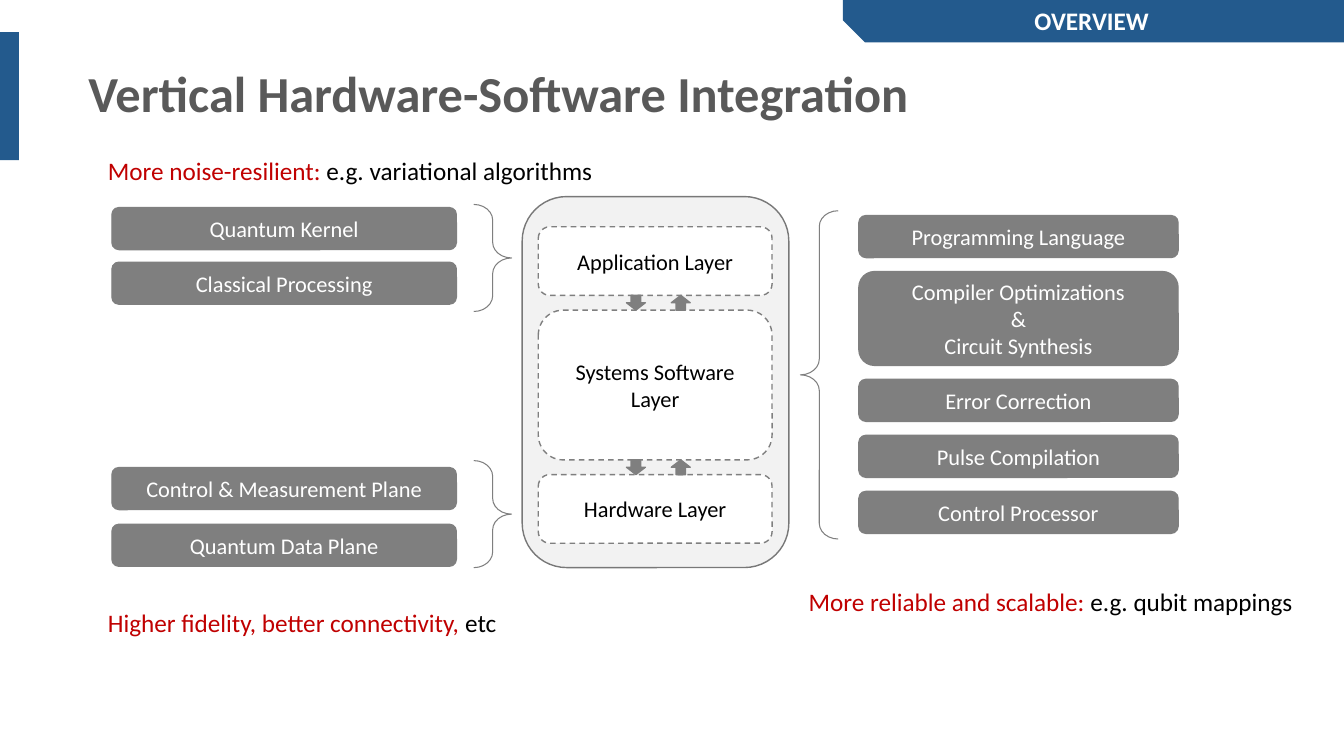
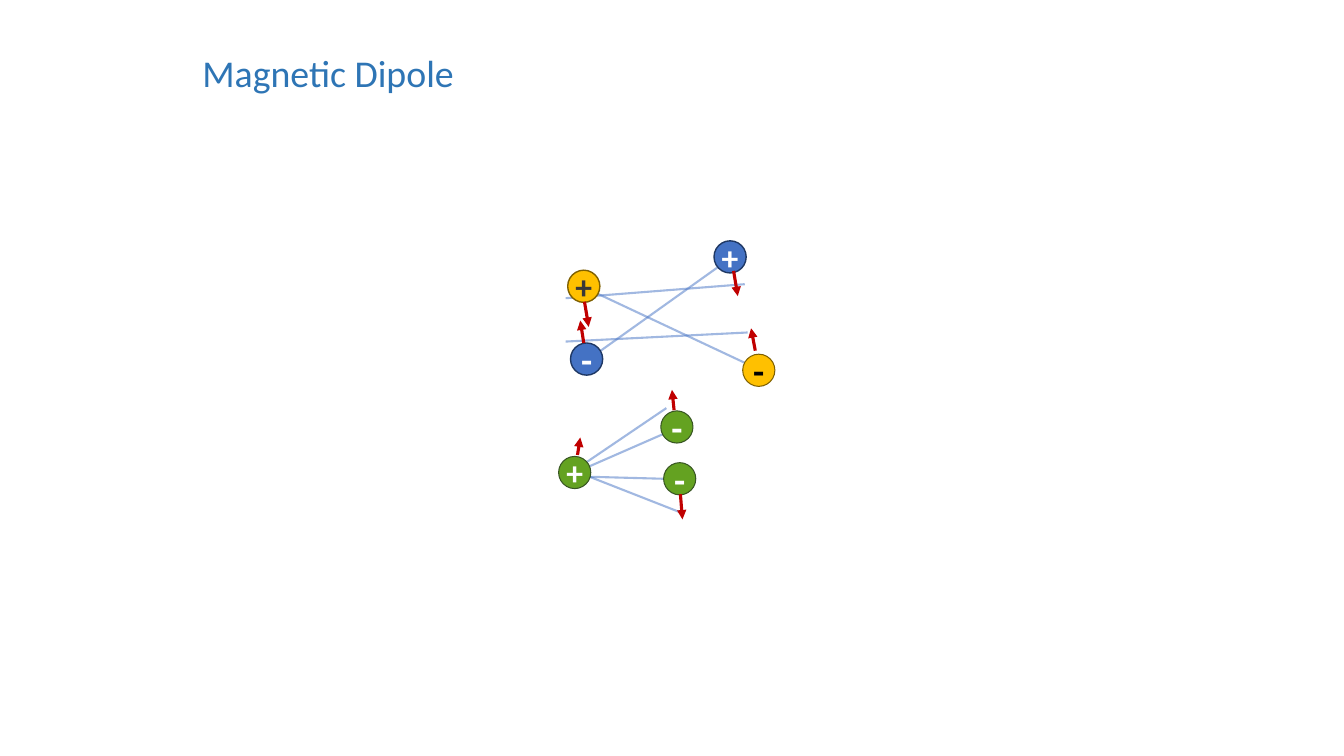
from pptx import Presentation
from pptx.util import Pt
from pptx.dml.color import RGBColor
from pptx.enum import dml, shapes, text
from pptx.oxml import ns
from lxml import etree

INK = {"navy": "235A8D", "white": "FFFFFF", "black": "000000", "pale": "F2F2F2",
       "gray": "7F7F7F", "edge": "787878", "slate": "595959", "red": "C00000",
       "title": "2E75B5", "blue": "4472C4", "deep": "1F3864", "gold": "FFC000",
       "brown": "7F6000", "green": "64A221", "moss": "385623", "coal": "3A3838"}
FONT = "Calibri"
KIND = shapes.MSO_SHAPE
MID = text.PP_ALIGN.CENTER

# Stacks of boxes: left, top, width, gap, dashed, (label, height)
LAYERS = (384.5, 162, 167, 10.5, True, [
    ("Application Layer", 49), ("Systems Software\nLayer", 107), ("Hardware Layer", 49)])
STACKS = [
    LAYERS,
    (613.5, 154, 228, 10, False, [
        ("Programming Language", 30),
        ("Compiler Optimizations\n&\nCircuit Synthesis", 67),
        ("Error Correction", 30), ("Pulse Compilation", 30), ("Control Processor", 30)]),
    (80, 148.3, 246, 9, False, [("Quantum Kernel", 30), ("Classical Processing", 30)]),
    (80, 334, 246, 10.5, False, [("Control & Measurement Plane", 30),
                                 ("Quantum Data Plane", 30)]),
]
# Braces: left, top, height, turn
BRACES = [(338.4, 146, 76.5, 0), (338.4, 329, 76.5, 0), (571.7, 150.5, 234.5, 180)]
# Notes: left, top, width, red part, black part
NOTES = [
    (70, 107.5, 364, "More noise-resilient: ", "e.g. variational algorithms"),
    (70, 430, 296, "Higher fidelity, better connectivity,", " etc"),
    (570.5, 415.5, 364, "More reliable and scalable: ", "e.g. qubit mappings"),
]

# Charges: centre x, centre y, sign, sign colour, fill, edge, edge width
SIZE = 23
CHARGES = [
    (542, 264.5, "-", "black", "gold", "brown", 0.75),
    (521.5, 183.5, "+", "white", "blue", "deep", 1),
    (419, 256.5, "-", "white", "blue", "deep", 1),
    (417, 204.5, "+", "coal", "gold", "brown", 1),
    (410.5, 337.5, "+", "white", "green", "moss", 0.75),
    (483.5, 305, "-", "white", "green", "moss", 0.75),
    (485.5, 342, "-", "white", "green", "moss", 0.75),
]
# Lines and arrows: from x, from y, to x, to y
FIELD = [
    (409.5, 336, 486, 366), (532, 203, 404, 213), (404, 244, 534, 237.5),
    (414, 333.5, 476, 291.5), (419, 340.5, 475, 342), (419, 334, 475, 309.5),
    (422, 207.5, 537, 261.5), (427, 252, 514, 190),
]
MOMENTS = [
    (486, 353, 487.5, 371), (417.5, 215.5, 420.5, 233.5), (524, 193.5, 527, 211.5),
    (417, 245, 414.5, 229), (539.5, 250.5, 536.5, 234.5), (412.5, 325, 414.5, 312.5),
    (481.5, 293, 480, 278.5),
]


def rgb(name):
    return RGBColor.from_string(INK[name])


def style(para, size, ink, bold=False, align=None):
    para.alignment = align
    for run in para.runs:
        font = run.font
        font.name, font.size, font.bold = FONT, Pt(size), bold
        font.color.rgb = rgb(ink)


def form(slide, kind, box, fill=None, edge=None, width=1, turn=0):
    item = slide.shapes.add_shape(kind, *map(Pt, box))
    item.shadow.inherit = False
    item.rotation = turn
    if fill:
        item.fill.solid()
        item.fill.fore_color.rgb = rgb(fill)
    else:
        item.fill.background()
    if edge:
        item.line.color.rgb = rgb(edge)
        item.line.width = Pt(width)
    else:
        item.line.fill.background()
    return item


def fill_text(item, words, size, ink, bold=False):
    frame = item.text_frame
    frame.text = words
    frame.vertical_anchor = text.MSO_ANCHOR.MIDDLE
    for para in frame.paragraphs:
        style(para, size, ink, bold, MID)
    return frame


def label(slide, box, words, size, ink, bold=False, align=None):
    frame = slide.shapes.add_textbox(*map(Pt, box)).text_frame
    frame.word_wrap = True
    para = frame.paragraphs[0]
    para.text = words
    style(para, size, ink, bold, align)
    return para


def stack(slide, left, top, width, gap, dashed, items):
    for words, high in items:
        box = form(slide, KIND.ROUNDED_RECTANGLE, (left, top, width, high),
                   "white" if dashed else "gray", "gray")
        if dashed:
            box.line.dash_style = dml.MSO_LINE.DASH
        fill_text(box, words, 16, "black" if dashed else "white")
        top += high + gap


def line(slide, ends, ink, width, alpha=None, arrow=False):
    link = slide.shapes.add_connector(shapes.MSO_CONNECTOR.STRAIGHT, *map(Pt, ends))
    link.line.color.rgb = rgb(ink)
    link.line.width = Pt(width)
    props = link._element.spPr
    if alpha:
        tone = props.find(".//" + ns.qn("a:srgbClr"))
        etree.SubElement(tone, ns.qn("a:alpha"), val=str(alpha * 1000))
    if arrow:
        etree.SubElement(props.find(ns.qn("a:ln")), ns.qn("a:tailEnd"), type="triangle")
    etree.SubElement(props, ns.qn("a:effectLst"))


def layers(slide):
    # Section tab, side band and title
    tab = form(slide, KIND.SNIP_1_RECTANGLE, (602, -1.4, 358, 31.7), "navy", turn=180)
    tab.adjustments[0] = 0.5
    label(slide, (618.5, 0, 322.5, 29), "OVERVIEW", 18, "white", True, MID)
    form(slide, KIND.RECTANGLE, (0, 23, 13.5, 91.5), "navy")
    label(slide, (56, 40.5, 814, 51), "Vertical Hardware-Software Integration",
          36, "slate", True)

    # Central panel and all stacks
    form(slide, KIND.ROUNDED_RECTANGLE, (373, 140.4, 190.5, 265), "pale", "edge")
    for args in STACKS:
        stack(slide, *args)

    # Arrow pairs in the gaps between layers
    top, gap, items = LAYERS[1], LAYERS[3], LAYERS[5]
    for _, high in items[:-1]:
        top += high
        for left, turn in ((447.5, 0), (479.5, 180)):
            form(slide, KIND.DOWN_ARROW, (left, top, 13.5, gap), "gray", "gray", turn=turn)
        top += gap

    # Braces and notes
    for left, top, high, turn in BRACES:
        brace = form(slide, KIND.RIGHT_BRACE, (left, top, 27, high),
                     edge="gray", width=0.75, turn=turn)
        brace.adjustments[0] = 0.417
    for left, top, width, lead, rest in NOTES:
        para = label(slide, (left, top, width, 29), lead, 18, "red")
        para.add_run().text = rest
        style(para, 18, "black")
        para.runs[0].font.color.rgb = rgb("red")


def dipole(slide):
    label(slide, (137.5, 31.7, 310, 41), "Magnetic Dipole", 27, "title")
    for ends in FIELD:
        line(slide, ends, "blue", 1.5, alpha=50)
    for x, y, sign, ink, fill, edge, width in CHARGES:
        ball = form(slide, KIND.OVAL, (x - SIZE / 2, y - SIZE / 2, SIZE, SIZE),
                    fill, edge, width)
        frame = fill_text(ball, sign, 24 if sign == "+" else 26, ink, True)
        frame.word_wrap = False
        frame.margin_left = frame.margin_right = 0
        frame.margin_top = frame.margin_bottom = 0
    for ends in MOMENTS:
        line(slide, ends, "red", 2.25, arrow=True)


def main():
    deck = Presentation()
    deck.slide_width, deck.slide_height = Pt(960), Pt(540)
    for draw in (layers, dipole):
        draw(deck.slides.add_slide(deck.slide_layouts[6]))
    deck.save("out.pptx")


if __name__ == "__main__":
    main()
